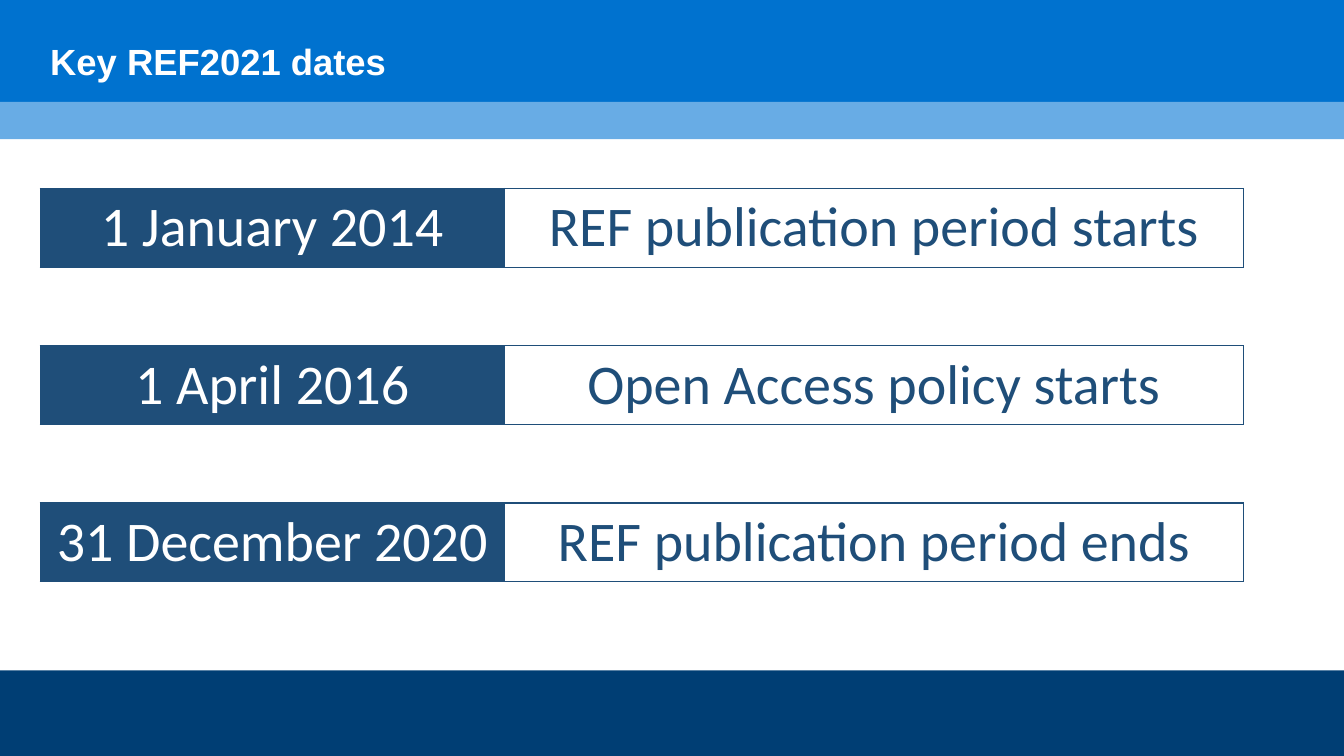
from lxml import etree
from pptx import Presentation, util as u
from pptx.dml.color import RGBColor
from pptx.enum import shapes, text
from pptx.oxml import ns

COLOURS = {
    "header": "0072CF",
    "stripe": "68ACE5",
    "footer": "003E74",
    "navy": "1F4E79",
    "white": "FFFFFF",
}
SLIDE_WIDTH, SLIDE_HEIGHT = 13.33, 7.5
ROW_HEIGHT = 0.78
COLUMN_WIDTHS = (4.6, 7.33)
KEY_DATES = [
    ("1 January 2014", "REF publication period starts"),
    ("1 April 2016", "Open Access policy starts"),
    ("31 December 2020", "REF publication period ends"),
]


class KeyDatesSlide:
    title_format = {"name": "Arial", "size": u.Pt(26), "bold": True}
    table_format = {"name": "Calibri", "size": u.Pt(40), "bold": False}

    def __init__(self, presentation):
        self.slide = presentation.slides.add_slide(presentation.slide_layouts[6])

    def colour(self, name):
        return RGBColor.from_string(COLOURS[name])

    def fill_paragraph(self, paragraph, content, font_format, colour):
        paragraph.text = content
        for name, value in font_format.items():
            setattr(paragraph.font, name, value)
        paragraph.font.color.rgb = self.colour(colour)

    def band(self, top, height, colour):
        shape = self.slide.shapes.add_shape(
            shapes.MSO_SHAPE.RECTANGLE, 0, u.Inches(top),
            u.Inches(SLIDE_WIDTH), u.Inches(height))
        shape.shadow.inherit = False
        shape.fill.solid()
        shape.fill.fore_color.rgb = self.colour(colour)
        shape.line.fill.background()

    def title(self, content, left, top, width, height):
        box = self.slide.shapes.add_textbox(*map(u.Inches, (left, top, width, height)))
        box.text_frame.word_wrap = True
        paragraph = box.text_frame.paragraphs[0]
        paragraph.line_spacing = 0.9
        self.fill_paragraph(paragraph, content, self.title_format, "white")

    def borders(self, cell, visible_sides):
        properties = cell._tc.get_or_add_tcPr()
        for side in "LRTB":
            line = etree.SubElement(properties, ns.qn(f"a:ln{side}"), w=str(u.Pt(1)))
            if side in visible_sides:
                fill = etree.SubElement(line, ns.qn("a:solidFill"))
                etree.SubElement(fill, ns.qn("a:srgbClr"), val=COLOURS["navy"])
            else:
                etree.SubElement(line, ns.qn("a:noFill"))

    def date_table(self, entries, left, top):
        row_count = 2 * len(entries) - 1
        table = self.slide.shapes.add_table(
            row_count, len(COLUMN_WIDTHS), u.Inches(left), u.Inches(top),
            u.Inches(sum(COLUMN_WIDTHS)), u.Inches(ROW_HEIGHT * row_count)).table
        table.first_row = table.horz_banding = False
        for column, width in zip(table.columns, COLUMN_WIDTHS):
            column.width = u.Inches(width)
        for index, row in enumerate(table.rows):
            row.height = u.Inches(ROW_HEIGHT)
            is_gap = index % 2 == 1
            for cell in row.cells:
                self.borders(cell, "TB" if is_gap else "LRTB")
                cell.fill.background()
            if is_gap:
                continue
            date_cell = table.cell(index, 0)
            date_cell.fill.solid()
            date_cell.fill.fore_color.rgb = self.colour("navy")
            for cell, content, colour in zip(row.cells, entries[index // 2], ("white", "navy")):
                paragraph = cell.text_frame.paragraphs[0]
                paragraph.alignment = text.PP_ALIGN.CENTER
                self.fill_paragraph(paragraph, content, self.table_format, colour)


def main():
    presentation = Presentation()
    presentation.slide_width = u.Inches(SLIDE_WIDTH)
    presentation.slide_height = u.Inches(SLIDE_HEIGHT)
    page = KeyDatesSlide(presentation)
    page.band(0, 1.01, "header")
    page.band(1.01, 0.37, "stripe")
    page.band(6.65, 0.85, "footer")
    page.title("Key REF2021 dates", 0.4, 0.39, 12.37, 0.62)
    page.date_table(KEY_DATES, 0.4, 1.87)
    presentation.save("out.pptx")


if __name__ == "__main__":
    main()
